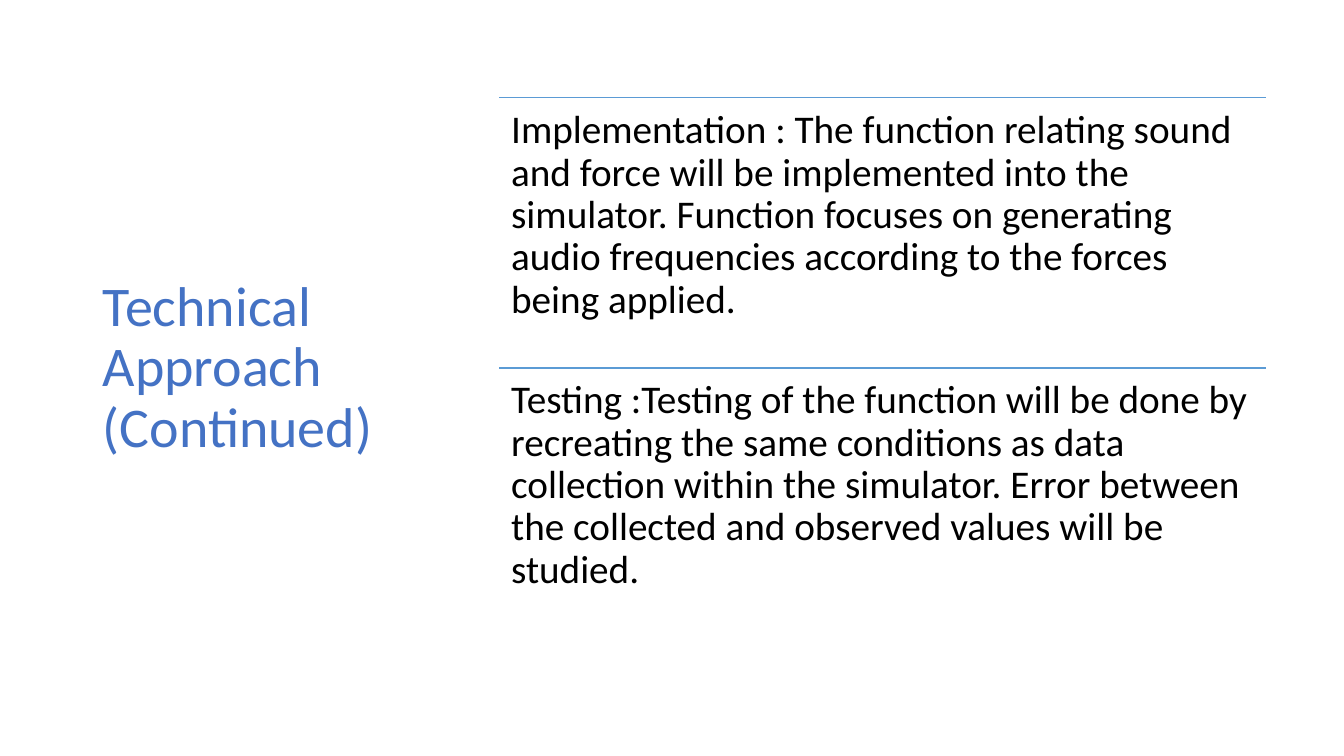
import pptx
import pptx.util
import pptx.dml.color
import pptx.enum.shapes
import pptx.enum.text
import pptx.oxml.ns
from lxml import etree

Inches = pptx.util.Inches
Pt = pptx.util.Pt
RGBColor = pptx.dml.color.RGBColor
Anchor = pptx.enum.text.MSO_ANCHOR

# Content
TITLE = "Technical Approach (Continued)"
STEPS = [
    "Implementation : The function relating sound and force will be implemented "
    "into the simulator. Function focuses on generating audio frequencies "
    "according to the forces being applied.",
    "Testing :Testing of the function will be done by recreating the same "
    "conditions as data collection within the simulator. Error between the "
    "collected and observed values will be studied.",
]

# Style and layout
FONT = "Calibri"
BLUE = RGBColor(0x44, 0x72, 0xC4)
SKY = RGBColor(0x5B, 0x9B, 0xD5)
BLACK = RGBColor(0, 0, 0)
LEFT, TOP, WIDTH, ROW = 4.95, 0.97, 7.61, 2.68
INSET = 0.12


def fill(frame, text, size, color, anchor):
    frame.text = text
    frame.word_wrap = True
    frame.auto_size = pptx.enum.text.MSO_AUTO_SIZE.NONE
    frame.vertical_anchor = anchor
    para = frame.paragraphs[0]
    para.alignment = pptx.enum.text.PP_ALIGN.LEFT
    para.line_spacing = 0.9
    para.font.name = FONT
    para.font.size = Pt(size)
    para.font.color.rgb = color


def rule(slide, top):
    line = slide.shapes.add_connector(
        pptx.enum.shapes.MSO_CONNECTOR.STRAIGHT,
        Inches(LEFT), Inches(top), Inches(LEFT + WIDTH), Inches(top))
    line.line.color.rgb = SKY
    line.line.width = Pt(1)
    etree.SubElement(line._element.spPr, pptx.oxml.ns.qn("a:effectLst"))


def step(slide, top, text):
    box = slide.shapes.add_textbox(
        Inches(LEFT), Inches(top), Inches(WIDTH), Inches(ROW))
    frame = box.text_frame
    frame.margin_left = frame.margin_right = Inches(INSET)
    frame.margin_top = frame.margin_bottom = Inches(INSET)
    fill(frame, text, 28, BLACK, Anchor.TOP)


def main():
    deck = pptx.Presentation()
    deck.slide_width, deck.slide_height = Inches(13.33), Inches(7.5)
    slide = deck.slides.add_slide(deck.slide_layouts[5])

    # Title at the left
    title = slide.shapes.title
    title.left, title.top = Inches(0.92), Inches(0.61)
    title.width, title.height = Inches(3.92), Inches(6.09)
    fill(title.text_frame, TITLE, 40, BLUE, Anchor.MIDDLE)

    # Ruled steps at the right
    for i, text in enumerate(STEPS):
        top = TOP + i * ROW
        rule(slide, top)
        step(slide, top, text)

    deck.save("out.pptx")


if __name__ == "__main__":
    main()
